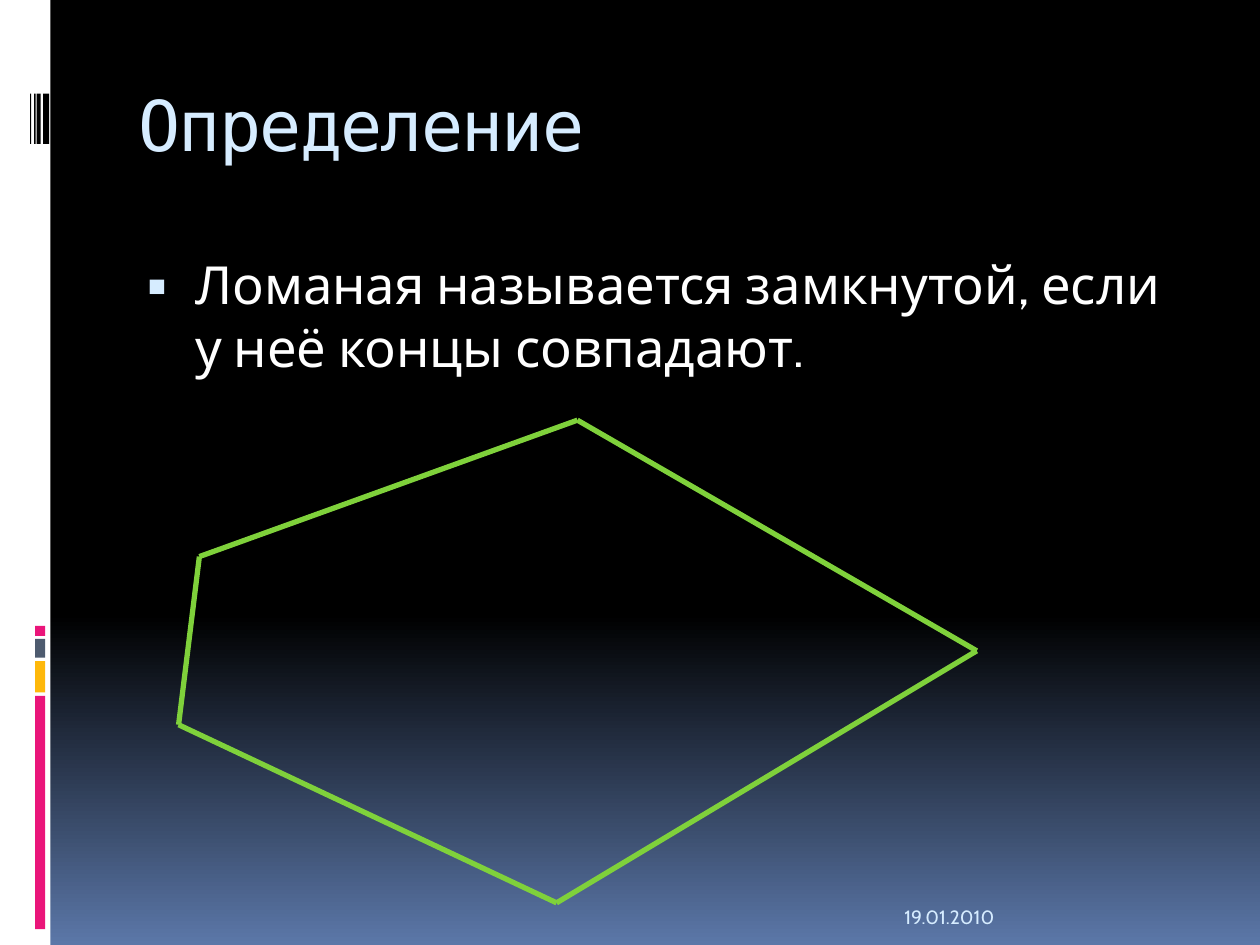
"""Build the slide that defines a closed polyline."""
import pptx
import pptx.util
import pptx.dml.color
import pptx.enum.shapes
import pptx.enum.text
import pptx.oxml
import pptx.oxml.ns

Cm = pptx.util.Cm
Pt = pptx.util.Pt
enum = pptx.enum.text


def tint(code):
    return pptx.dml.color.RGBColor.from_string(code)


def write(box, place, text, face, size, code, frame):
    box.left, box.top, box.width, box.height = map(Cm, place)
    body = box.text_frame
    look = {"word_wrap": True, "auto_size": enum.MSO_AUTO_SIZE.NONE, **frame}
    for key, value in look.items():
        setattr(body, key, value)
    para = body.paragraphs[0]
    para.alignment = enum.PP_ALIGN.LEFT
    run = para.add_run()
    run.text = text
    for key, value in {"name": face, "size": Pt(size)}.items():
        setattr(run.font, key, value)
    run.font.color.rgb = tint(code)
    return para


deck = pptx.Presentation()
deck.slide_width, deck.slide_height = Cm(25.4), Cm(19.05)
slide = deck.slides.add_slide(deck.slide_layouts[1])

fill = slide.background.fill
fill.gradient()
fill.gradient_angle = 270
for stop, spot, code in zip(fill.gradient_stops, (0.65, 1), ("000000", "5B77A8")):
    stop.position = spot
    stop.color.rgb = tint(code)

bars = [
    (0, 0, 1.02, 19.05, "FFFFFF"),
    (0.71, 14.03, 0.2, 4.7, "EA157A"),
    (0.71, 13.33, 0.2, 0.63, "FEB80A"),
    (0.71, 12.88, 0.2, 0.38, "4E5B6F"),
    (0.71, 12.62, 0.2, 0.2, "EA157A"),
]
for left, wide in ((0.87, 0.12), (0.74, 0.08), (0.69, 0.03), (0.61, 0.02)):
    bars.append((left, 1.89, wide, 1.01, "000000"))
for *place, code in bars:
    bar = slide.shapes.add_shape(
        pptx.enum.shapes.MSO_SHAPE.RECTANGLE, *map(Cm, place))
    bar.shadow.inherit = False
    bar.fill.solid()
    bar.fill.fore_color.rgb = tint(code)
    bar.line.fill.background()

top = enum.MSO_ANCHOR.TOP
title = write(slide.shapes.title, (2.54, 1.42, 21.59, 2.54), "Определение",
              "DejaVu Sans Mono", 40, "D6ECFF",
              {"vertical_anchor": top, "margin_top": Cm(0.23)})
title.runs[0].font._element.set("spc", "-100")

item = write(slide.placeholders[1], (2.54, 4.95, 21.59, 12.7),
             "Ломаная называется замкнутой, если у неё концы совпадают.",
             "Cabin", 30, "FFFFFF", {"vertical_anchor": top})
item.space_before = Pt(7)
props = item._p.get_or_add_pPr()
props.set("marL", str(Cm(1.14)))
props.set("indent", str(Cm(-0.97)))
space = pptx.oxml.ns.nsdecls("a")
for mark in (
    f'<a:buClr {space}><a:srgbClr val="D6ECFF"/></a:buClr>',
    f'<a:buSzPct {space} val="95000"/>',
    f'<a:buFont {space} typeface="Cabin"/>',
    f'<a:buChar {space} char="▪"/>',
):
    props.append(pptx.oxml.parse_xml(mark))

write(slide.shapes.add_textbox(0, 0, 0, 0), (17.98, 17.83, 5.92, 1.02),
      "19.01.2010", "Cabin", 11, "D6ECFF",
      {"vertical_anchor": enum.MSO_ANCHOR.BOTTOM})

nodes = [(4.02, 11.22), (11.64, 8.47), (19.69, 13.12), (11.22, 18.2), (3.6, 14.61)]
for start, end in zip(nodes, nodes[1:] + nodes[:1]):
    edge = slide.shapes.add_connector(
        pptx.enum.shapes.MSO_CONNECTOR.STRAIGHT, *map(Cm, start + end))
    edge.line.width = Pt(3)
    edge.line.color.rgb = tint("7FD13B")
    edge._element.spPr.append(pptx.oxml.parse_xml(f"<a:effectLst {space}/>"))

deck.save("out.pptx")
